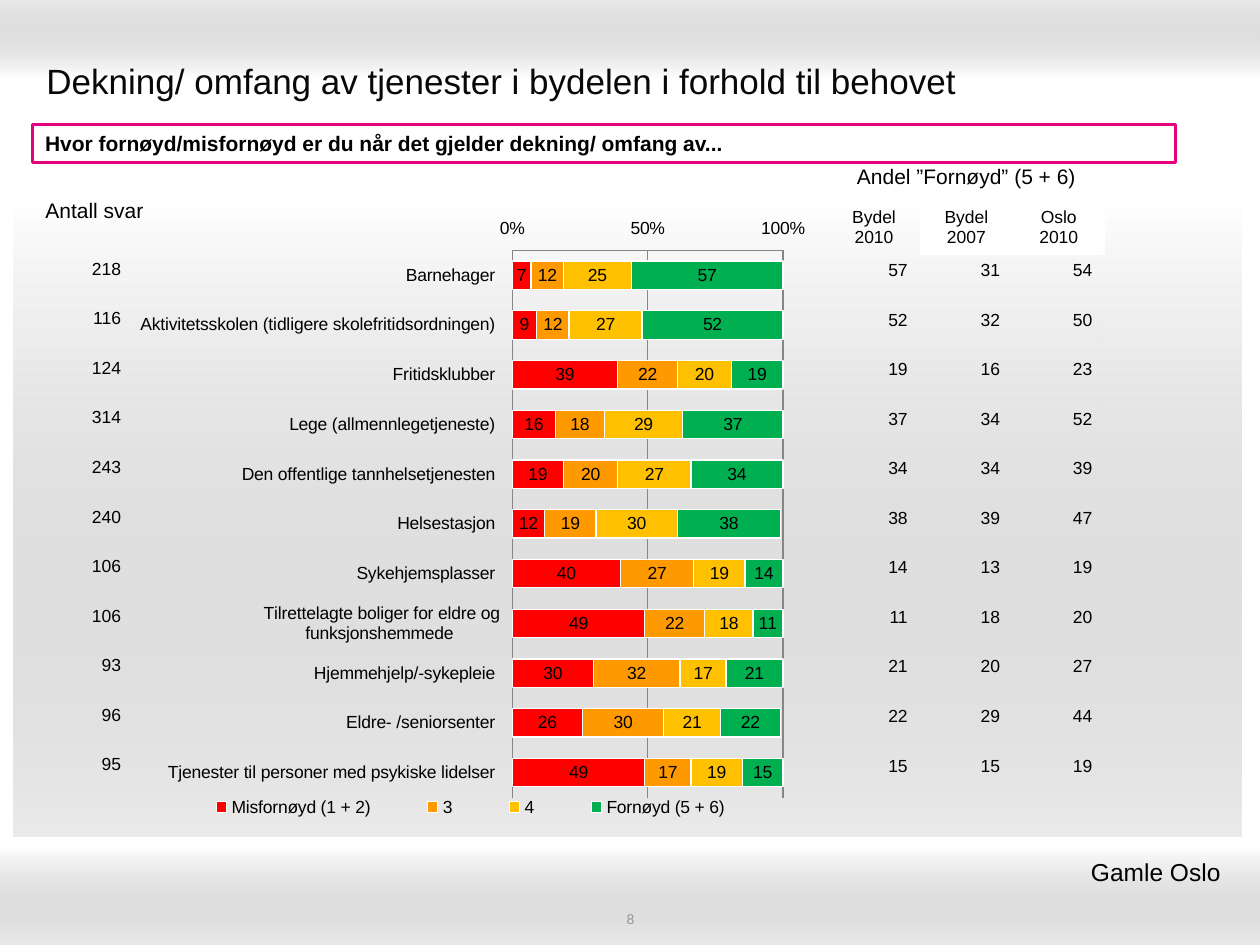
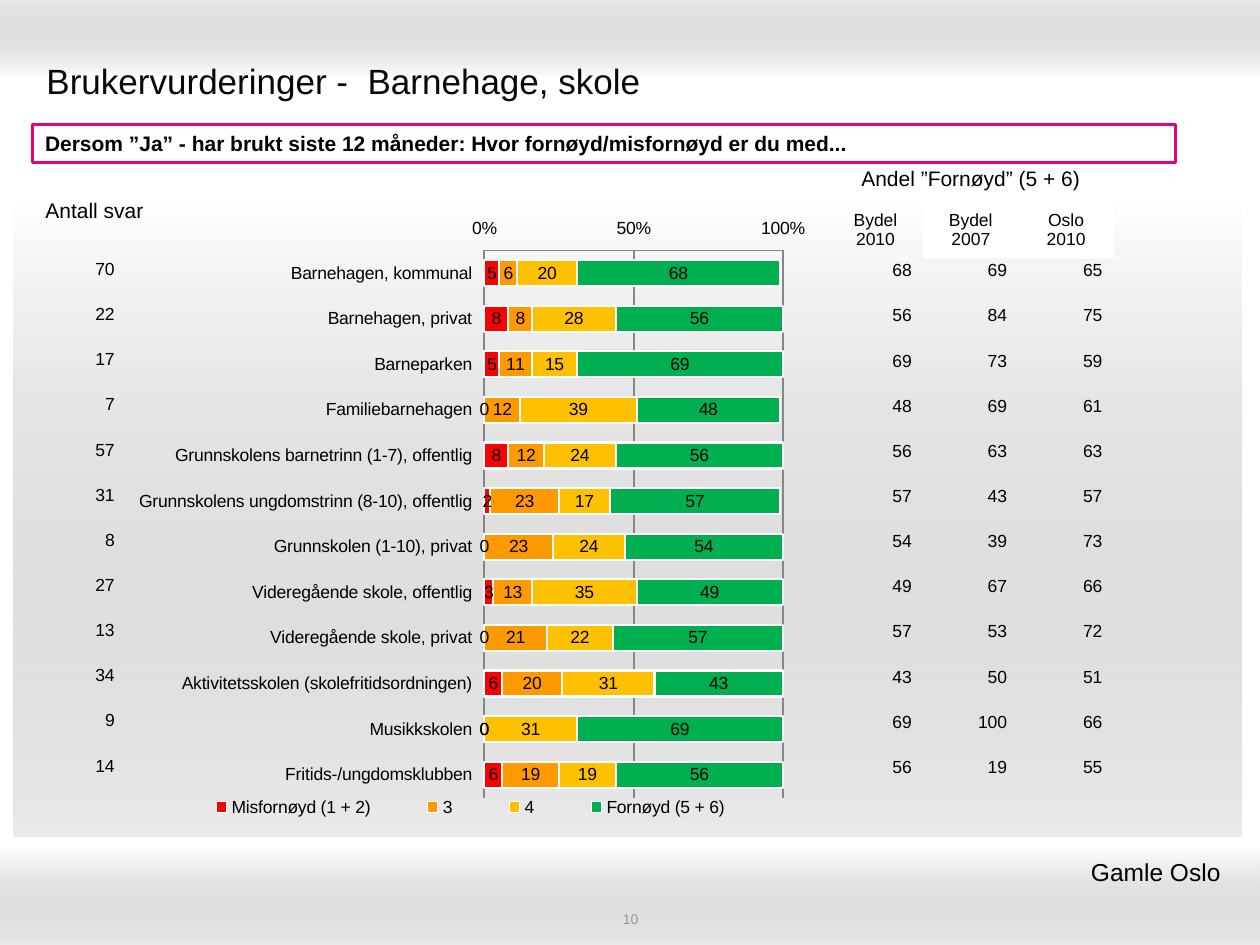
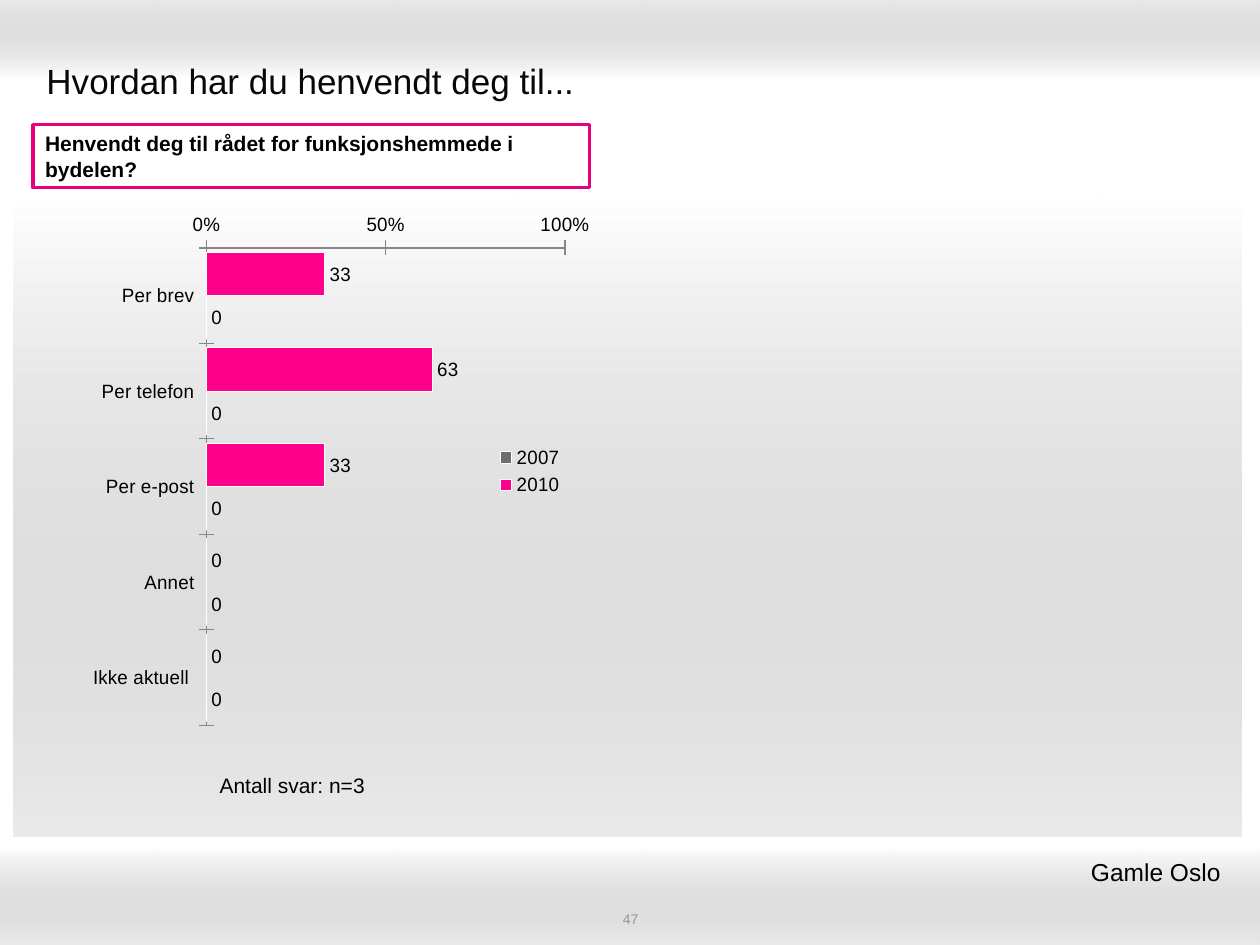
import pptx
import pptx.chart.data
import pptx.dml.color
import pptx.enum.chart
import pptx.enum.shapes
import pptx.enum.text
import pptx.oxml
import pptx.oxml.ns
import pptx.util

RGB = pptx.dml.color.RGBColor
BLACK = RGB(0, 0, 0)
TITLE_INK = RGB(0x08, 0x08, 0x08)
WHITE = RGB(0xFF, 0xFF, 0xFF)
BAND_GREY = RGB(0x99, 0x99, 0x99)
NUMBER_GREY = RGB(0x96, 0x96, 0x96)
AXIS_GREY = RGB(0x86, 0x86, 0x86)
MAGENTA = RGB(0xE7, 0x00, 0x7E)
PINK = RGB(0xFF, 0x00, 0x8C)
DARK_GREY = RGB(0x6E, 0x6E, 0x6E)
RED = RGB(0xFF, 0x00, 0x00)
ORANGE = RGB(0xFF, 0x99, 0x00)
YELLOW = RGB(0xFF, 0xC0, 0x00)
GREEN = RGB(0x00, 0xB0, 0x50)

FONT = "Arial"
WIDTH, HEIGHT = pptx.util.Inches(10), pptx.util.Inches(7.5)
COLUMN, ROW = WIDTH / 100, HEIGHT / 75
NO_GRID_STYLE = "{2D5ABB26-0587-4C30-8999-92F81FD0307C}"

ALIGN = pptx.enum.text.PP_ALIGN
ANCHOR = pptx.enum.text.MSO_ANCHOR
RECTANGLE = pptx.enum.shapes.MSO_SHAPE.RECTANGLE
CHART = pptx.enum.chart.XL_CHART_TYPE
TICK = pptx.enum.chart.XL_TICK_MARK
TICK_LABEL = pptx.enum.chart.XL_TICK_LABEL_POSITION
LABEL = pptx.enum.chart.XL_LABEL_POSITION
LEGEND = pptx.enum.chart.XL_LEGEND_POSITION

# left, top, width, height, angle of the fade from white to grey
BANDS = [
    (0, 0, 100, 6.2, 90),
    (0, 67.2, 100, 7.8, 270),
    (1.1, 15.6, 97.4, 50.8, 270),
]
RATINGS = [("Misfornøyd (1 + 2)", RED), ("3", ORANGE),
           ("4", YELLOW), ("Fornøyd (5 + 6)", GREEN)]

# service, answers, share per rating, satisfied in the district 2007 and in Oslo 2010
COVERAGE = [
    ("Barnehager ", 218, (7, 12, 25, 57), (31, 54)),
    ("Aktivitetsskolen (tidligere skolefritidsordningen) ", 116, (9, 12, 27, 52), (32, 50)),
    ("Fritidsklubber ", 124, (39, 22, 20, 19), (16, 23)),
    ("Lege (allmennlegetjeneste) ", 314, (16, 18, 29, 37), (34, 52)),
    ("Den offentlige tannhelsetjenesten ", 243, (19, 20, 27, 34), (34, 39)),
    ("Helsestasjon ", 240, (12, 19, 30, 38), (39, 47)),
    ("Sykehjemsplasser ", 106, (40, 27, 19, 14), (13, 19)),
    ("Tilrettelagte boliger for eldre og funksjonshemmede ", 106, (49, 22, 18, 11), (18, 20)),
    ("Hjemmehjelp/-sykepleie ", 93, (30, 32, 17, 21), (20, 27)),
    ("Eldre- /seniorsenter ", 96, (26, 30, 21, 22), (29, 44)),
    ("Tjenester til personer med psykiske lidelser ", 95, (49, 17, 19, 15), (15, 19)),
]
SCHOOLS = [
    ("Barnehagen, kommunal", 70, (5, 6, 20, 68), (69, 65)),
    ("Barnehagen, privat", 22, (8, 8, 28, 56), (84, 75)),
    ("Barneparken", 17, (5, 11, 15, 69), (73, 59)),
    ("Familiebarnehagen", 7, (0, 12, 39, 48), (69, 61)),
    ("Grunnskolens barnetrinn (1-7), offentlig", 57, (8, 12, 24, 56), (63, 63)),
    ("Grunnskolens ungdomstrinn (8-10), offentlig", 31, (2, 23, 17, 57), (43, 57)),
    ("Grunnskolen (1-10), privat", 8, (0, 23, 24, 54), (39, 73)),
    ("Videregående skole, offentlig", 27, (3, 13, 35, 49), (67, 66)),
    ("Videregående skole, privat", 13, (0, 21, 22, 57), (53, 72)),
    ("Aktivitetsskolen (skolefritidsordningen)", 34, (6, 20, 31, 43), (50, 51)),
    ("Musikkskolen", 9, (0, 0, 31, 69), (100, 66)),
    ("Fritids-/ungdomsklubben", 14, (6, 19, 19, 56), (19, 55)),
]
CONTACT_WAYS = ["Per brev", "Per telefon", "Per e-post", "Annet", "Ikke aktuell "]
CONTACT_YEARS = [("2010", PINK, (33, 63, 33, 0, 0)), ("2007", DARK_GREY, (0, 0, 0, 0, 0))]


def assign(target, **values):
    for name, value in values.items():
        setattr(target, name, value)


def place(left, top, width, height):
    """Turn grid columns and rows into slide lengths."""
    return [round(n * unit) for n, unit in
            zip((left, top, width, height), (COLUMN, ROW, COLUMN, ROW))]


def style_font(font, size, colour=BLACK, bold=False):
    assign(font, name=FONT, size=pptx.util.Pt(size), bold=bold)
    font.color.rgb = colour


def write(frame, text, size, align=ALIGN.LEFT, colour=BLACK, bold=False):
    frame.text = text
    for paragraph in frame.paragraphs:
        paragraph.alignment = align
        style_font(paragraph.font, size, colour, bold)


def add_text(slide, area, text, size, anchor=ANCHOR.TOP, inset=None, **look):
    frame = slide.shapes.add_textbox(*place(*area)).text_frame
    assign(frame, word_wrap=True, vertical_anchor=anchor)
    if inset is not None:
        assign(frame, **{f"margin_{side}": inset for side in ("left", "top", "right", "bottom")})
    write(frame, text, size, **look)


def add_band(slide, left, top, width, height, angle):
    band = slide.shapes.add_shape(RECTANGLE, *place(left, top, width, height))
    band.shadow.inherit = False
    band.line.fill.background()
    band.fill.gradient()
    band.fill.gradient_angle = angle
    for stop, position, colour in zip(band.fill.gradient_stops, (0, 1), (WHITE, BAND_GREY)):
        stop.position = position
        stop.color.rgb = colour
    grey = band._element.findall(".//" + pptx.oxml.ns.qn("a:srgbClr"))[-1]
    grey.append(pptx.oxml.parse_xml(
        f'<a:alpha {pptx.oxml.ns.nsdecls("a")} val="20000"/>'))


def add_question(slide, text, width, height):
    box = slide.shapes.add_shape(RECTANGLE, *place(2.6, 9.9, width, height))
    box.shadow.inherit = False
    box.fill.solid()
    box.fill.fore_color.rgb = WHITE
    box.line.color.rgb = MAGENTA
    box.line.width = pptx.util.Pt(2)
    assign(box.text_frame, word_wrap=True, vertical_anchor=ANCHOR.TOP)
    write(box.text_frame, text, 12, bold=True)


def add_slide(deck, title, number, question, question_width=90.7, question_height=3):
    slide = deck.slides.add_slide(deck.slide_layouts[6])
    for band in BANDS:
        add_band(slide, *band)
    add_text(slide, (2.7, 3.6, 94.5, 5.5), title, 20, ANCHOR.MIDDLE, colour=TITLE_INK)
    add_text(slide, (34.2, 72.2, 31.7, 1.4), number, 8, ANCHOR.MIDDLE, 0,
             align=ALIGN.CENTER, colour=NUMBER_GREY)
    add_question(slide, question, question_width, question_height)
    add_text(slide, (61, 67.5, 37.4, 3.4), "Gamle Oslo ", 14, align=ALIGN.RIGHT)
    return slide


def add_plain_table(slide, area, rows, size=10, align=ALIGN.RIGHT):
    """Add a table without grid or fill, with equal rows and columns."""
    table = slide.shapes.add_table(len(rows), len(rows[0]), *place(*area)).table
    assign(table, first_row=False, horz_banding=False)
    table._tbl.find(".//" + pptx.oxml.ns.qn("a:tableStyleId")).text = NO_GRID_STYLE
    for r, values in enumerate(rows):
        for c, value in enumerate(values):
            cell = table.cell(r, c)
            cell.fill.background()
            cell.vertical_anchor = ANCHOR.MIDDLE
            write(cell.text_frame, str(value), size, align)
    return table


def add_share_header(slide, left, top, width):
    heads = ["Bydel\n2010", "Bydel\n2007", "Oslo\n2010"]
    table = add_plain_table(slide, (left, top, width, 8),
                            [["Andel ”Fornøyd” (5 + 6)", "", ""], heads], align=ALIGN.CENTER)
    table.cell(0, 0).merge(table.cell(0, 2))
    style_font(table.cell(0, 0).text_frame.paragraphs[0].font, 12)
    for row, height in zip(table.rows, (3.7, 4.3)):
        row.height = round(height * ROW)
    for c in (1, 2):
        fill = table.cell(1, c).fill
        fill.solid()
        fill.fore_color.rgb = WHITE


def manual_layout(x, y, width, height, inner=False):
    """Chart layout in shares of the chart's size."""
    target = '<c:layoutTarget val="inner"/>' if inner else ""
    return pptx.oxml.parse_xml(
        f'<c:layout {pptx.oxml.ns.nsdecls("c")}><c:manualLayout>{target}'
        '<c:xMode val="edge"/><c:yMode val="edge"/>'
        f'<c:x val="{x}"/><c:y val="{y}"/><c:w val="{width}"/><c:h val="{height}"/>'
        '</c:manualLayout></c:layout>')


def set_layout(chart, plot, legend=None):
    plot_area = chart._chartSpace.find(".//" + pptx.oxml.ns.qn("c:plotArea"))
    for layout in plot_area.findall(pptx.oxml.ns.qn("c:layout")):
        plot_area.remove(layout)
    plot_area.insert(0, manual_layout(*plot, inner=True))
    if legend:
        overlay = chart.legend._element.find(pptx.oxml.ns.qn("c:overlay"))
        overlay.addprevious(manual_layout(*legend))


def add_bar_chart(slide, area, kind, categories, series, size, gap, overlap, label_position,
                  legend_position, legend_overlay, outline):
    """Add a percentage bar chart; series holds (name, colour, values)."""
    data = pptx.chart.data.CategoryChartData(number_format="0")
    data.categories = categories
    for name, _, values in series:
        data.add_series(name, values)
    chart = slide.shapes.add_chart(kind, *place(*area), data).chart
    assign(chart, has_title=False, has_legend=True)
    style_font(chart.font, size)
    assign(chart.legend, position=legend_position, include_in_layout=legend_overlay)

    plot = chart.plots[0]
    assign(plot, gap_width=gap, overlap=overlap, vary_by_categories=False, has_data_labels=True)
    assign(plot.data_labels, show_value=True, number_format="0",
           number_format_is_linked=False, position=label_position)
    style_font(plot.data_labels.font, size)
    for bars, (_, colour, _) in zip(plot.series, series):
        bars.format.fill.solid()
        bars.format.fill.fore_color.rgb = colour
        bars.format.line.color.rgb = WHITE
        bars.format.line.width = pptx.util.Pt(outline)

    chart.category_axis.reverse_order = True
    assign(chart.value_axis, minimum_scale=0, maximum_scale=100, major_unit=50,
           has_major_gridlines=False)
    assign(chart.value_axis.tick_labels, number_format="General\\%",
           number_format_is_linked=False)
    for axis in (chart.category_axis, chart.value_axis):
        assign(axis, major_tick_mark=TICK.CROSS, minor_tick_mark=TICK.NONE)
        axis.format.line.color.rgb = AXIS_GREY
    return chart


def add_rating_chart(slide, survey, plot_left, plot_width, outline):
    shares = zip(*(ratings for _, _, ratings, _ in survey))
    series = [(name, colour, values) for (name, colour), values in zip(RATINGS, shares)]
    chart = add_bar_chart(
        slide, (9.8, 16.3, 55.1, 51.1), CHART.BAR_STACKED, [row[0] for row in survey], series,
        size=10, gap=75, overlap=100, label_position=LABEL.CENTER,
        legend_position=LEGEND.BOTTOM, legend_overlay=False, outline=outline)
    assign(chart.category_axis, major_tick_mark=TICK.NONE, tick_label_position=TICK_LABEL.LOW)
    assign(chart.value_axis, major_tick_mark=TICK.INSIDE, tick_label_position=TICK_LABEL.LOW,
           has_major_gridlines=True)
    gridline = chart.value_axis.major_gridlines.format.line
    gridline.color.rgb = AXIS_GREY
    gridline.width = pptx.util.Pt(outline)
    set_layout(chart, (plot_left, 0.07, plot_width, 0.85), (0.06, 0.91, 0.88, 0.05))


def add_rating_tables(slide, survey, top, height, counts_left, share_left, share_width, head_top):
    add_plain_table(slide, (share_left, top, share_width, height),
                    [(ratings[-1], *others) for _, _, ratings, others in survey])
    add_share_header(slide, 65.7, head_top, share_width)
    add_plain_table(slide, (0.4, 13.8, 14.2, 5.9), [["Antall svar"]], 12, ALIGN.CENTER)
    add_plain_table(slide, (counts_left, top - 0.1, 7.1, height),
                    [[answers] for _, answers, _, _ in survey])


def add_contact_chart(slide):
    chart = add_bar_chart(
        slide, (2.6, 16.8, 44.2, 41.2), CHART.BAR_CLUSTERED, CONTACT_WAYS, CONTACT_YEARS,
        size=11, gap=20, overlap=0, label_position=LABEL.OUTSIDE_END,
        legend_position=LEGEND.RIGHT, legend_overlay=True, outline=0.75)
    set_layout(chart, (0.32, 0.07, 0.66, 0.92))


def main():
    deck = pptx.Presentation()
    assign(deck, slide_width=WIDTH, slide_height=HEIGHT)

    coverage = add_slide(deck, "Dekning/ omfang av tjenester i bydelen i forhold til behovet", "8",
                         "Hvor fornøyd/misfornøyd er du når det gjelder dekning/ omfang av...")
    add_rating_chart(coverage, COVERAGE, plot_left=0.56, plot_width=0.39, outline=0.75)
    add_rating_tables(coverage, COVERAGE, top=19.5, height=43.3, counts_left=3.5,
                      share_left=65.7, share_width=22, head_top=12.2)

    schools = add_slide(
        deck, "Brukervurderinger -  Barnehage, skole", "10",
        "Dersom ”Ja” - har brukt siste 12 måneder: Hvor fornøyd/misfornøyd er du med...")
    add_rating_chart(schools, SCHOOLS, plot_left=0.52, plot_width=0.43, outline=1.25)
    add_rating_tables(schools, SCHOOLS, top=19.7, height=43, counts_left=3,
                      share_left=65.8, share_width=22.7, head_top=12.4)

    contact = add_slide(deck, "Hvordan har du henvendt deg til...", "47",
                        "Henvendt deg til rådet for funksjonshemmede i bydelen?", 44.2, 5)
    add_contact_chart(contact)
    add_plain_table(contact, (16.1, 60.3, 14.2, 4.2), [["Antall svar: n=3"]], 12, ALIGN.CENTER)

    deck.save("out.pptx")


if __name__ == "__main__":
    main()
